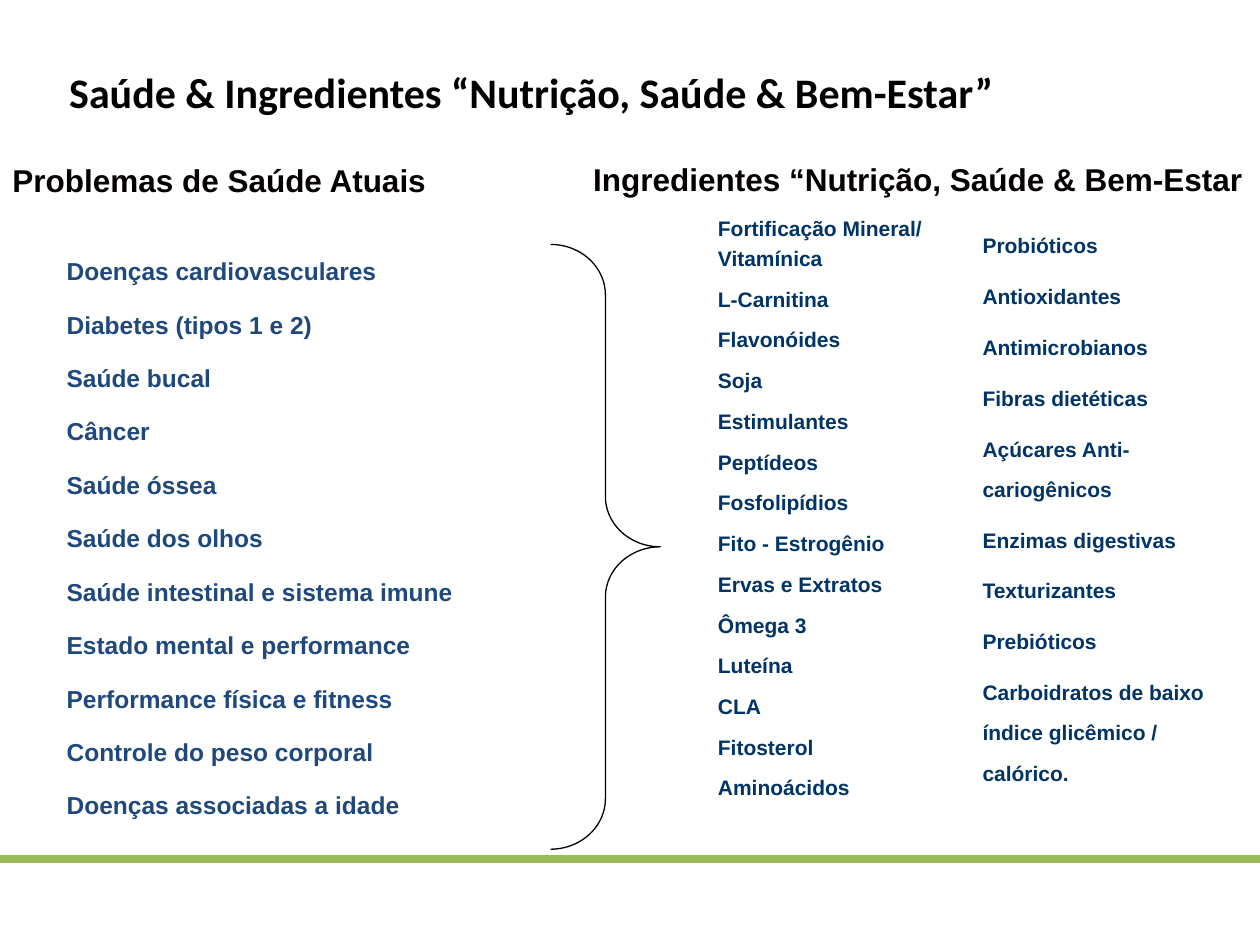
import pptx
import pptx.dml.color
import pptx.enum.shapes
import pptx.enum.text
import pptx.oxml.ns
import pptx.util
from lxml import etree

RGB = pptx.dml.color.RGBColor
BLACK = RGB(0x00, 0x00, 0x00)
HEADING = RGB(0x05, 0x00, 0x00)
WHITE = RGB(0xFF, 0xFF, 0xFF)
BLUE = RGB(0x1F, 0x49, 0x7D)
NAVY = RGB(0x00, 0x33, 0x66)
GREEN = RGB(0x9B, 0xBB, 0x59)

TITLE = "Saúde & Ingredientes “Nutrição, Saúde & Bem-Estar” "
HEADINGS = [
    ("Problemas de Saúde Atuais", (0, 1.23, 4.52, 0.37)),
    ("Ingredientes “Nutrição, Saúde & Bem-Estar", (4.61, 1.22, 5.39, 0.4)),
]
PROBLEMS = [
    "Doenças cardiovasculares", "Diabetes (tipos 1 e 2)", "Saúde bucal", "Câncer",
    "Saúde óssea", "Saúde dos olhos", "Saúde intestinal e sistema imune",
    "Estado mental e performance", "Performance física e fitness",
    "Controle do peso corporal", "Doenças associadas a idade",
]
NUTRIENTS = [
    "Fortificação Mineral/ Vitamínica", "L-Carnitina", "Flavonóides", "Soja",
    "Estimulantes", "Peptídeos", "Fosfolipídios", "Fito - Estrogênio",
    "Ervas e Extratos", "Ômega 3", "Luteína", "CLA", "Fitosterol", "Aminoácidos",
]
FUNCTIONAL = [
    "Probióticos", "Antioxidantes", "Antimicrobianos", "Fibras dietéticas",
    "Açúcares Anti-cariogênicos", "Enzimas digestivas", "Texturizantes",
    "Prebióticos", "Carboidratos de baixo índice glicêmico / calórico.",
]
# items, box, font size, colour, line spacing
LISTS = [
    (PROBLEMS, (0.43, 1.89, 3.82, 4.85), 14, BLUE, 1.4),
    (NUTRIENTS, (5.6, 1.62, 2.06, 5), 12, NAVY, 1.2),
    (FUNCTIONAL, (7.7, 1.68, 2.03, 4.74), 12, NAVY, 1.6),
]
BRACE_BOX = (4.37, 1.94, 0.87, 4.8)
RULE_Y = 6.82


def inches(box):
    return [pptx.util.Inches(v) for v in box]


def set_font(p, size, color, name="Arial"):
    values = {"size": pptx.util.Pt(size), "name": name, "bold": True}
    for r in p.runs:
        for key, value in values.items():
            setattr(r.font, key, value)
        r.font.color.rgb = color


def add_text(s, items, box, size, color, spacing=1.0):
    """Add a text box with one paragraph per item, half a line apart."""
    sp = s.shapes.add_textbox(*inches(box))
    tf = sp.text_frame
    tf.word_wrap = True
    for i, item in enumerate(items):
        p = tf.add_paragraph() if i else tf.paragraphs[0]
        p.text = item
        p.line_spacing = spacing
        if i:
            p.space_before = pptx.util.Pt(size / 2)
        set_font(p, size, color)
    return sp


def add_rule(s, y, width):
    line = s.shapes.add_connector(
        pptx.enum.shapes.MSO_CONNECTOR.STRAIGHT, 0, y, width, y)
    line.line.color.rgb = GREEN
    line.line.width = pptx.util.Pt(4.5)
    etree.SubElement(line._element.spPr, pptx.oxml.ns.qn("a:effectLst"))


def add_title(s):
    sp = s.shapes.title
    sp.left, sp.top, sp.width, sp.height = inches((0.05, 0.39, 8.41, 0.67))
    tf = sp.text_frame
    tf.text = TITLE
    tf.vertical_anchor = pptx.enum.text.MSO_ANCHOR.MIDDLE
    p = tf.paragraphs[0]
    p.alignment = pptx.enum.text.PP_ALIGN.CENTER
    set_font(p, 24, BLACK, "Calibri")


def add_brace(s):
    sp = s.shapes.add_shape(
        pptx.enum.shapes.MSO_SHAPE.RIGHT_BRACE, *inches(BRACE_BOX))
    sp.adjustments[0] = 0.46
    sp.adjustments[1] = 0.5
    sp.shadow.inherit = False
    sp.fill.background()
    sp.line.color.rgb = BLACK
    sp.line.width = pptx.util.Pt(0.75)


def main():
    prs = pptx.Presentation()
    prs.slide_width, prs.slide_height = inches((10, 7.5))
    s = prs.slides.add_slide(prs.slide_layouts[5])
    add_rule(s, pptx.util.Inches(RULE_Y), prs.slide_width)
    add_title(s)
    for text, box in HEADINGS:
        add_text(s, [text], box, 18, HEADING)
    for items, box, size, color, spacing in LISTS:
        sp = add_text(s, items, box, size, color, spacing)
        sp.fill.solid()
        sp.fill.fore_color.rgb = WHITE
    add_brace(s)
    prs.save("out.pptx")


if __name__ == "__main__":
    main()
